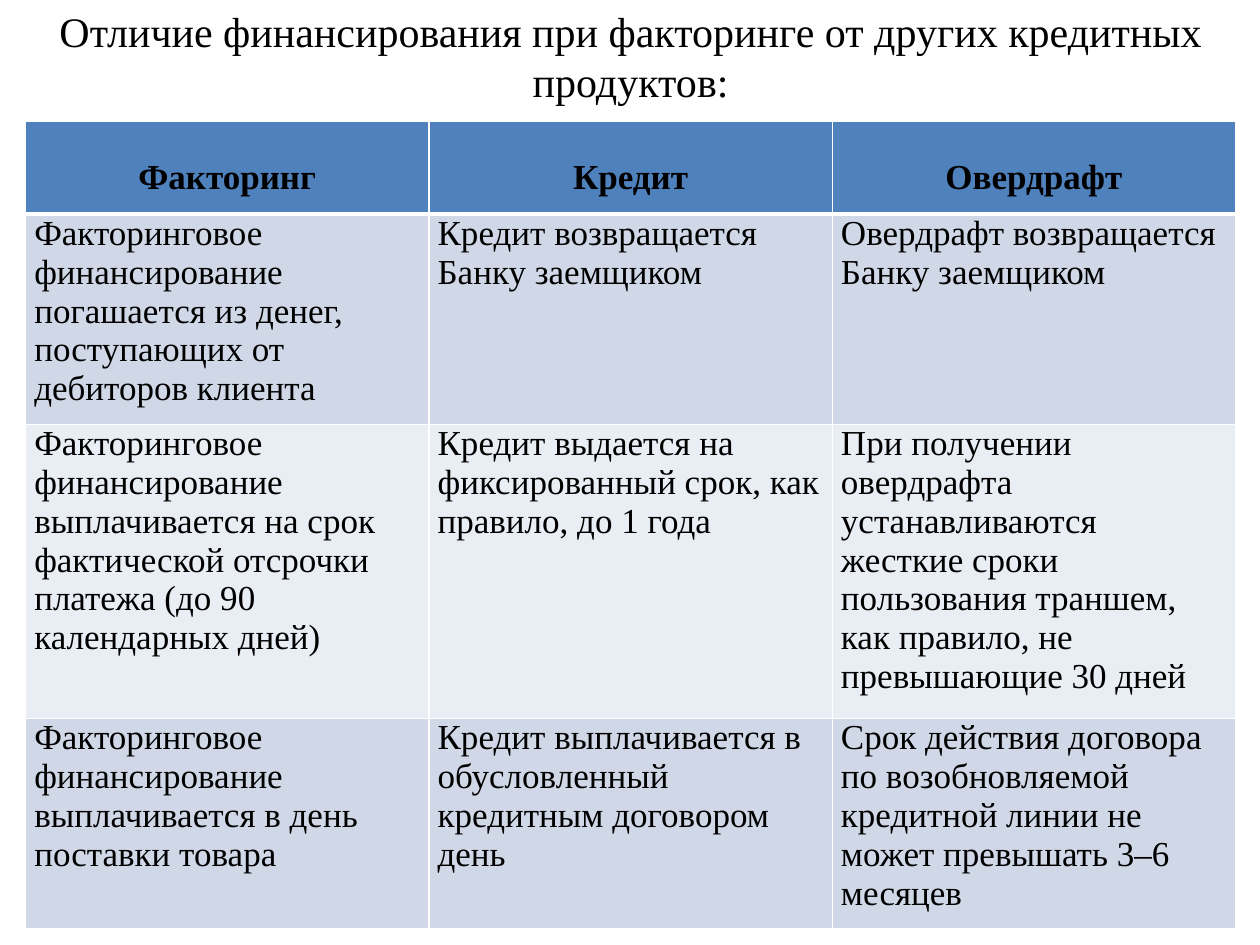
import pptx
import pptx.dml.color
import pptx.enum.text
import pptx.oxml
import pptx.oxml.ns
import pptx.util

Pt = pptx.util.Pt
PP_ALIGN = pptx.enum.text.PP_ALIGN
ANCHOR = pptx.enum.text.MSO_ANCHOR

FONT = "Times New Roman"
LEFT, WIDTH = 14.6, 691.5
TITLE = "Отличие финансирования при факторинге от других кредитных продуктов:"
PRODUCTS = ["Факторинг", "Кредит", "Овердрафт"]
DIFFERENCES = [
    ["Факторинговое финансирование погашается из денег, поступающих от дебиторов клиента",
     "Кредит возвращается Банку заемщиком",
     "Овердрафт возвращается Банку заемщиком"],
    ["Факторинговое финансирование выплачивается на срок фактической отсрочки платежа "
     "(до 90 календарных дней)",
     "Кредит выдается на фиксированный срок, как правило, до 1 года",
     "При получении овердрафта устанавливаются жесткие сроки пользования траншем, "
     "как правило, не превышающие 30 дней"],
    ["Факторинговое финансирование выплачивается в день поставки товара",
     "Кредит выплачивается в обусловленный кредитным договором день",
     "Срок действия договора по возобновляемой кредитной линии не может превышать 3–6 месяцев"],
]
ROW_HEIGHTS = [53, 120, 168, 119.5]
HEADER_FILL = "4F81BD"
BAND_FILLS = ["D0D8E8", "E9EDF4"]


def color(hex_value):
    return pptx.dml.color.RGBColor.from_string(hex_value)


def write(frame, text, size, bold=False, align=PP_ALIGN.LEFT, spacing=None):
    paragraph = frame.paragraphs[0]
    paragraph.alignment = align
    paragraph.line_spacing = spacing
    run = paragraph.add_run()
    run.text = text
    run.font.name = FONT
    run.font.size = Pt(size)
    run.font.bold = bold
    run.font.color.rgb = color("000000")


def set_borders(cell, top, bottom):
    properties = cell._tc.get_or_add_tcPr()
    widths = {"lnL": 1, "lnR": 1, "lnT": top, "lnB": bottom}
    for position, (side, width) in enumerate(widths.items()):
        line = pptx.oxml.parse_xml(
            f'<a:{side} {pptx.oxml.ns.nsdecls("a")} w="{Pt(width)}"><a:solidFill>'
            f'<a:srgbClr val="FFFFFF"/></a:solidFill></a:{side}>')
        properties.insert(position, line)


def style_cell(cell, fill):
    cell.margin_left = cell.margin_right = Pt(5)
    cell.margin_top = cell.margin_bottom = Pt(0)
    cell.fill.solid()
    cell.fill.fore_color.rgb = color(fill)


def add_title(slide):
    title = slide.shapes.add_textbox(Pt(LEFT), Pt(-0.5), Pt(WIDTH), Pt(65.5))
    title.text_frame.word_wrap = True
    write(title.text_frame, TITLE, 24, align=PP_ALIGN.CENTER)


def add_comparison(slide):
    comparison = slide.shapes.add_table(
        len(ROW_HEIGHTS), len(PRODUCTS), Pt(LEFT), Pt(69.4),
        Pt(WIDTH), Pt(sum(ROW_HEIGHTS))).table
    for column in comparison.columns:
        column.width = Pt(WIDTH / len(PRODUCTS))
    for row, height in zip(comparison.rows, ROW_HEIGHTS):
        row.height = Pt(height)

    # Header: product names
    for cell, product in zip(comparison.rows[0].cells, PRODUCTS):
        style_cell(cell, HEADER_FILL)
        set_borders(cell, top=1, bottom=3)
        cell.vertical_anchor = ANCHOR.MIDDLE
        write(cell.text_frame, product, 20, True, PP_ALIGN.CENTER, 1.5)

    # Body: banded rows of differences
    for index, differences in enumerate(DIFFERENCES):
        for cell, difference in zip(comparison.rows[index + 1].cells, differences):
            style_cell(cell, BAND_FILLS[index % 2])
            set_borders(cell, top=1 if index else 3, bottom=1)
            write(cell.text_frame, difference, 20)


def main():
    deck = pptx.Presentation()
    deck.slide_width, deck.slide_height = Pt(720), Pt(540)
    slide = deck.slides.add_slide(deck.slide_layouts[6])
    add_title(slide)
    add_comparison(slide)
    deck.save("out.pptx")


if __name__ == "__main__":
    main()
